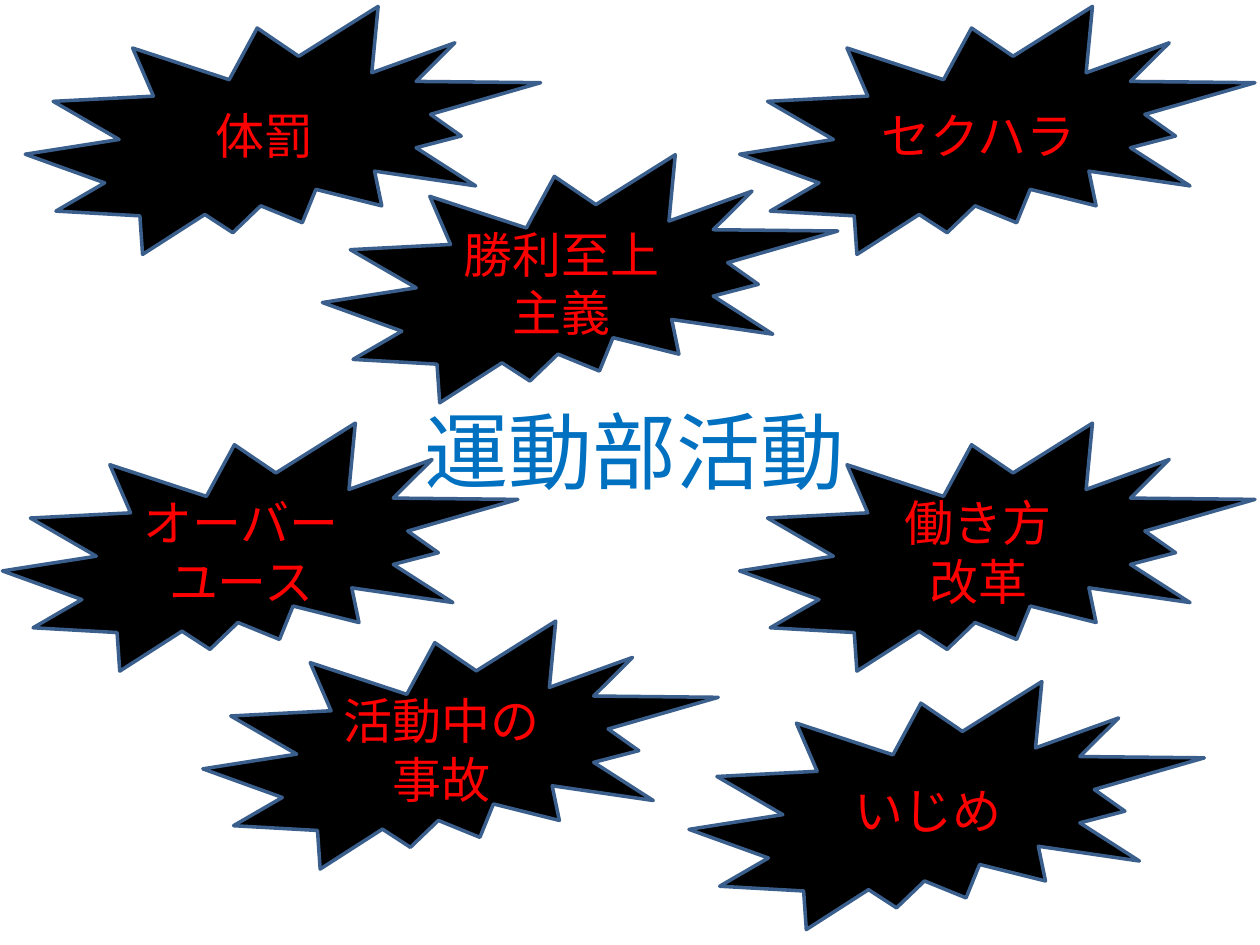
import pptx
import pptx.dml.color
import pptx.enum.shapes
import pptx.enum.text
import pptx.util

Cm = pptx.util.Cm
Align = pptx.enum.text.PP_ALIGN
Anchor = pptx.enum.text.MSO_ANCHOR

BURST_WIDTH, BURST_HEIGHT = 10.39, 5
LEFT_OF_RIGHT_COLUMN = 14.91
TOP_ROW, MIDDLE_ROW = 0.13, 8.53

# Problems around club activities: text, left, top in cm
PROBLEMS = [
    ("体罰", 0.51, TOP_ROW),
    ("セクハラ", LEFT_OF_RIGHT_COLUMN, TOP_ROW),
    ("勝利至上主義", 6.5, 3.12),
    ("働き方\n改革", LEFT_OF_RIGHT_COLUMN, MIDDLE_ROW),
    ("オーバーユース", 0.05, MIDDLE_ROW),
    ("活動中の事故", 4.09, 12.52),
    ("いじめ", 13.89, 13.74),
]


def color(hex_string):
    return pptx.dml.color.RGBColor.from_string(hex_string)


def set_attributes(target, values):
    for name, value in values.items():
        setattr(target, name, value)


def write_text(frame, text, size, hex_string, alignment, anchor):
    set_attributes(frame, {"text": text, "word_wrap": True, "vertical_anchor": anchor})
    for paragraph in frame.paragraphs:
        paragraph.alignment = alignment
        set_attributes(paragraph.runs[0].font, {"name": "Calibri", "size": pptx.util.Pt(size)})
        paragraph.runs[0].font.color.rgb = color(hex_string)


def add_theme(slide, text, left, top, width, height):
    theme = slide.shapes.add_textbox(Cm(left), Cm(top), Cm(width), Cm(height))
    write_text(theme.text_frame, text, 48, "0070C0", Align.LEFT, Anchor.TOP)
    theme.text_frame.auto_size = pptx.enum.text.MSO_AUTO_SIZE.SHAPE_TO_FIT_TEXT


def add_burst(slide, text, left, top):
    burst = slide.shapes.add_shape(
        pptx.enum.shapes.MSO_SHAPE.EXPLOSION2,
        Cm(left), Cm(top), Cm(BURST_WIDTH), Cm(BURST_HEIGHT))
    burst.shadow.inherit = False
    burst.fill.solid()
    burst.fill.fore_color.rgb = color("000000")
    burst.line.color.rgb = color("3A5F8C")
    burst.line.width = pptx.util.Pt(2)
    write_text(burst.text_frame, text, 28, "FF0000", Align.CENTER, Anchor.MIDDLE)


def main():
    presentation = pptx.Presentation()
    set_attributes(presentation, {"slide_width": Cm(25.4), "slide_height": Cm(19.05)})
    slide = presentation.slides.add_slide(presentation.slide_layouts[6])

    # Central theme, behind the bursts
    add_theme(slide, "運動部活動", 8.31, 7.92, 9.4, 2.31)

    # Problem bursts
    for text, left, top in PROBLEMS:
        add_burst(slide, text, left, top)

    presentation.save("out.pptx")


if __name__ == "__main__":
    main()
